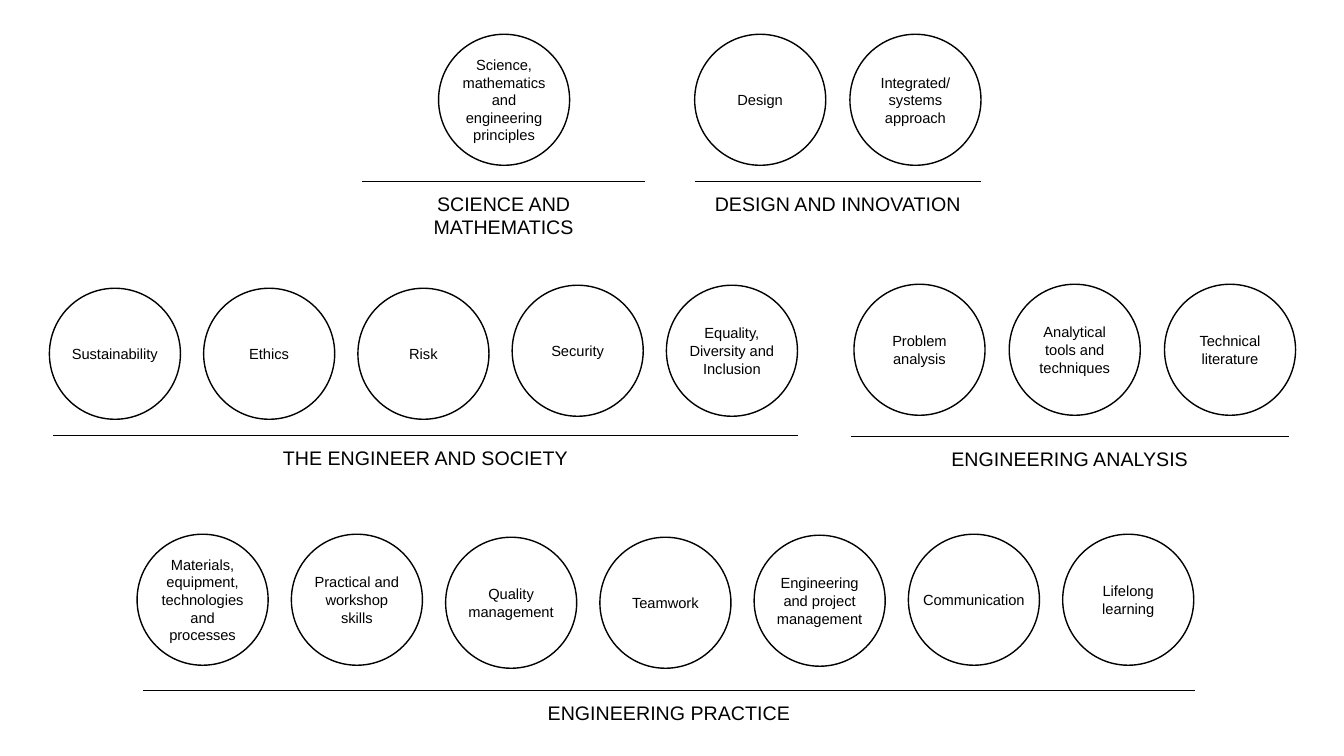
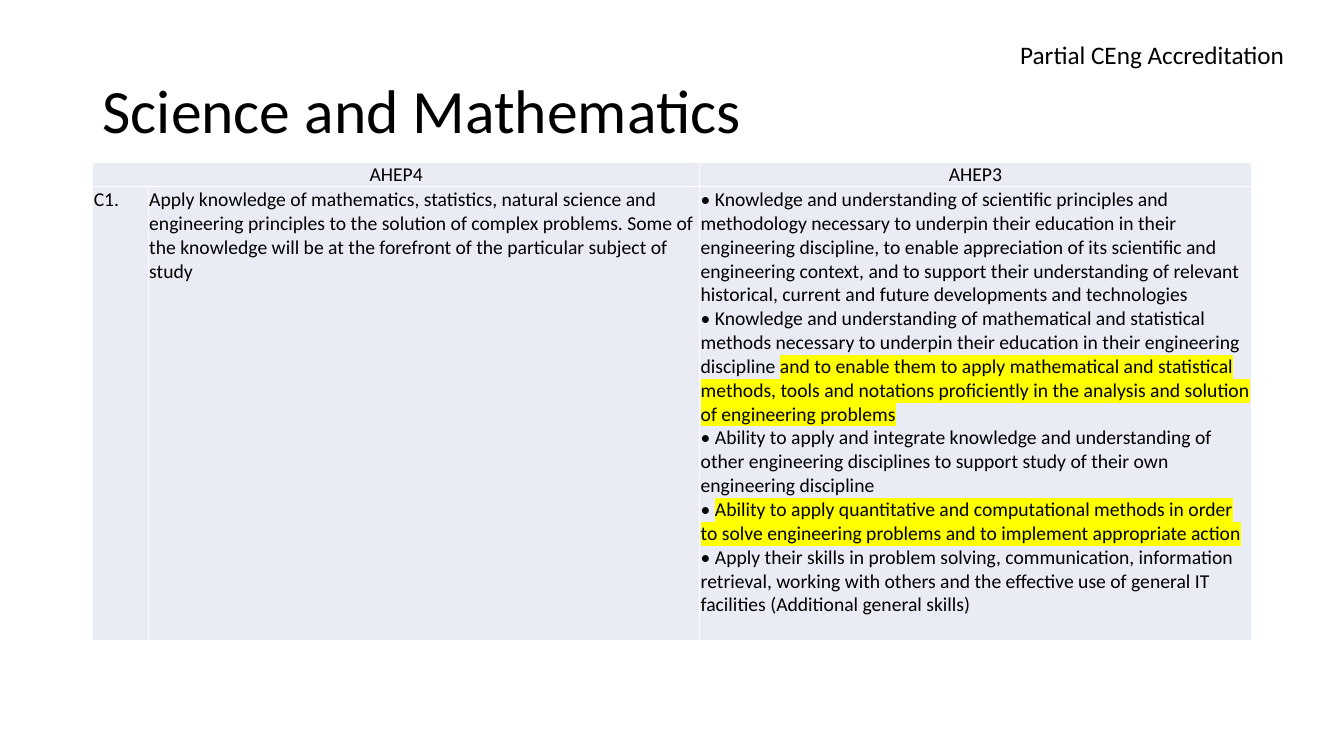
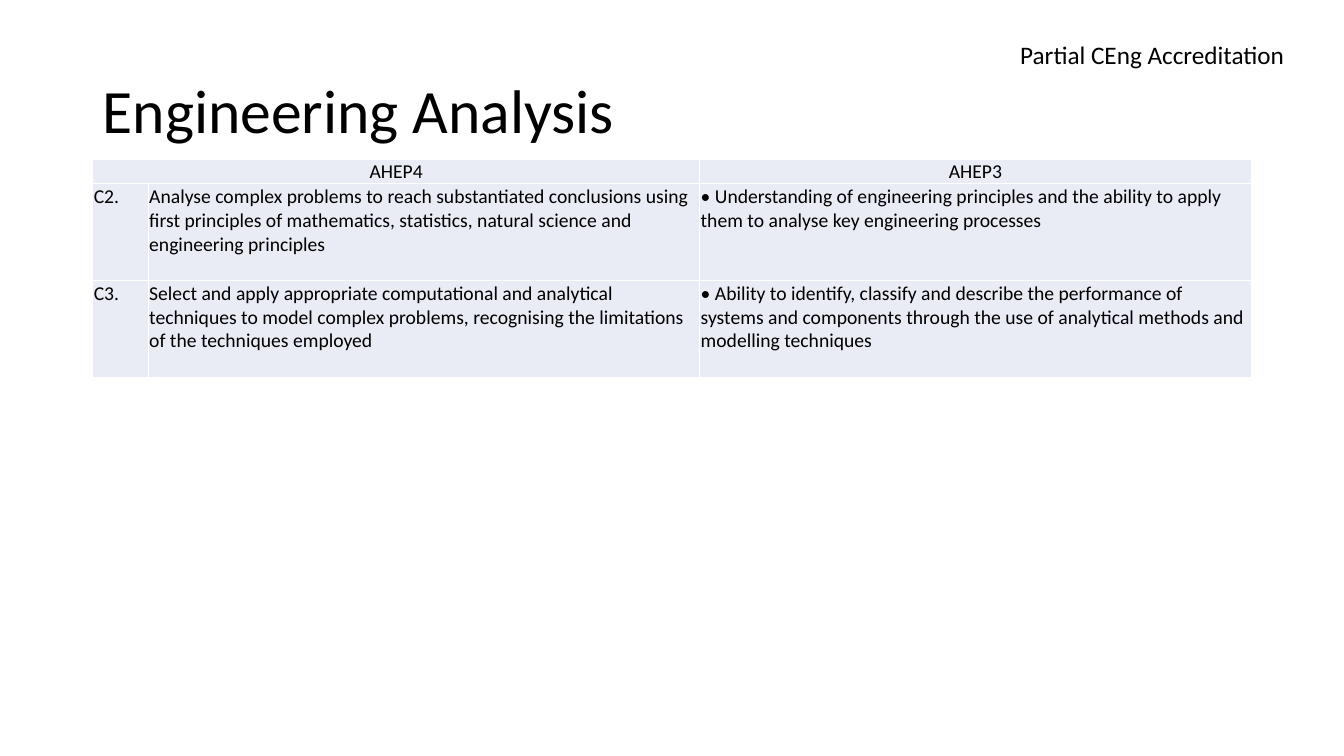
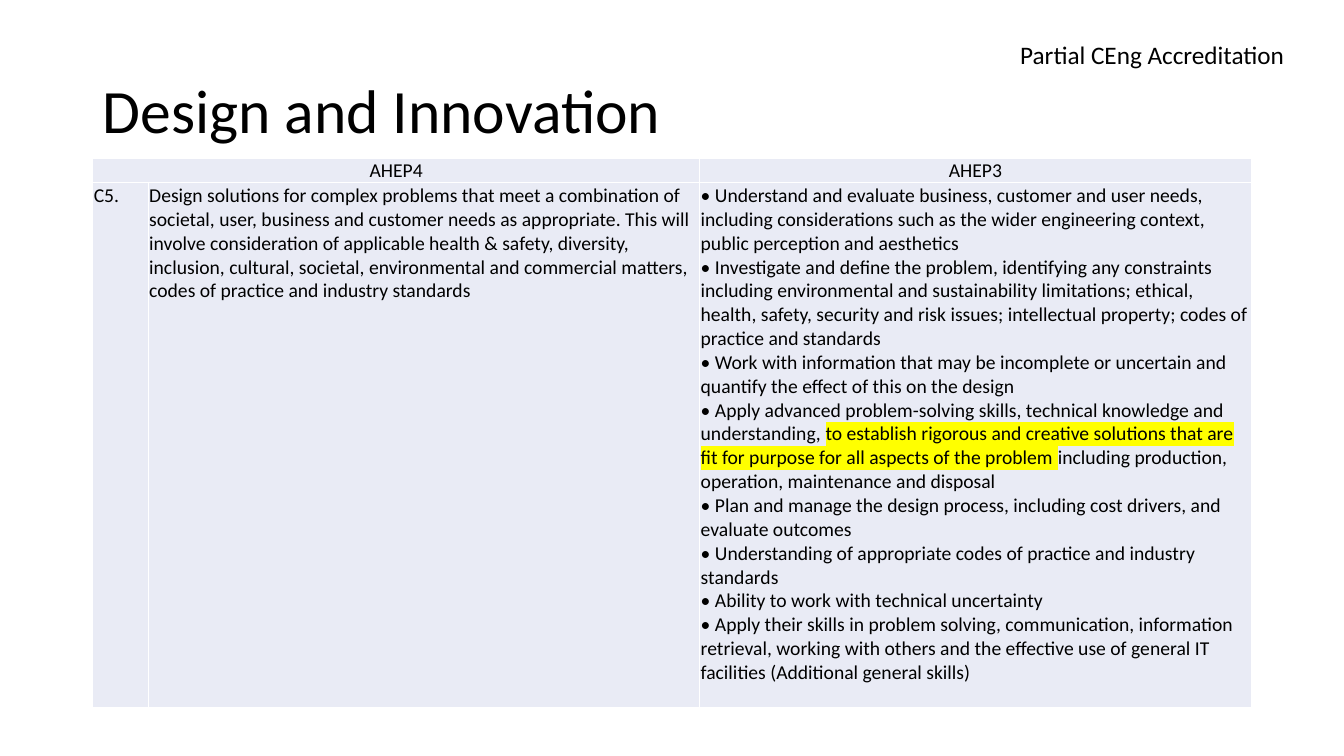
from lxml import etree
from pptx import Presentation
from pptx import util as u
from pptx.dml.color import RGBColor
from pptx.enum import shapes, text
from pptx.oxml import ns

INK = {"text": "000000", "page": "FFFFFF", "cell": "E9EBF5", "mark": "FFFF00"}
ALIGN = {"left": text.PP_ALIGN.LEFT, "center": text.PP_ALIGN.CENTER}
ANCHOR = {"top": text.MSO_ANCHOR.TOP, "middle": text.MSO_ANCHOR.MIDDLE}
BOX = (0.1, 0.05, 0.1, 0.05)
SIZE = 1.3


def rgb(name):
    return RGBColor.from_string(INK[name])


def solid(parent, tag, name):
    """Add a child that holds a plain colour, as highlights and borders do."""
    node = etree.SubElement(parent, ns.qn(tag))
    if tag != "a:highlight":
        node.set("w", str(u.Pt(1)))
        node = etree.SubElement(node, ns.qn("a:solidFill"))
    etree.SubElement(node, ns.qn("a:srgbClr")).set("val", INK[name])


def put(frame, words, size=14, font="Calibri", align="left", space=None):
    """Fill a text frame from a string or a list of paragraphs; |bars| mark highlights."""
    lines = [words] if isinstance(words, str) else words
    for i, line in enumerate(lines):
        para = frame.add_paragraph() if i else frame.paragraphs[0]
        para.alignment = ALIGN[align]
        if space:
            para.line_spacing = space
        for j, part in enumerate(line.split("|")):
            if not part:
                continue
            run = para.add_run()
            run.text = part
            run.font.size = u.Pt(size)
            run.font.color.rgb = rgb("text")
            if j % 2:
                solid(run.font._element, "a:highlight", "mark")
            run.font.name = font


class Deck:
    def __init__(self):
        self.prs = Presentation()
        self.prs.slide_width = u.Inches(13.33)
        self.prs.slide_height = u.Inches(7.5)
        self.page = None

    def new(self):
        self.page = self.prs.slides.add_slide(self.prs.slide_layouts[6])

    def frame(self, shape, wrap=True, anchor="top", pad=BOX):
        frame = shape.text_frame
        frame.word_wrap = wrap
        frame.vertical_anchor = ANCHOR[anchor]
        (frame.margin_left, frame.margin_top,
         frame.margin_right, frame.margin_bottom) = map(u.Inches, pad)
        return frame

    def label(self, at, words, wrap=True, anchor="top", **fmt):
        box = self.page.shapes.add_textbox(*map(u.Inches, at))
        put(self.frame(box, wrap, anchor), words, **fmt)

    def circle(self, left, top, words):
        oval = self.page.shapes.add_shape(
            shapes.MSO_SHAPE.OVAL, *map(u.Inches, (left, top, SIZE, SIZE)))
        oval.shadow.inherit = False
        oval.fill.background()
        oval.line.color.rgb = rgb("text")
        oval.line.width = u.Pt(1)
        # A single word stays on one line
        frame = self.frame(oval, " " in words, "middle", (0, 0, 0, 0))
        put(frame, words, size=10.5, font="Arial", align="center")

    def rule(self, left, right, top):
        line = self.page.shapes.add_connector(
            shapes.MSO_CONNECTOR.STRAIGHT, *map(u.Inches, (left, top, right, top)))
        line.line.color.rgb = rgb("text")
        line.line.width = u.Pt(0.5)
        etree.SubElement(line._element.spPr, ns.qn("a:effectLst"))

    def group(self, name, span, base, start, step, items):
        """A row of circles over a rule and its caption."""
        for i, (top, words) in enumerate(items):
            self.circle(start + i * step, top, words)
        left, right = span
        self.rule(left, right, base)
        self.label((left, base + 0.05, right - left, 0.34), name, wrap=False,
                   font="Arial", align="center")

    def cell(self, cell, words, align="left"):
        (cell.margin_left, cell.margin_top,
         cell.margin_right, cell.margin_bottom) = map(u.Inches, (0.01, 0.01, 0.01, 0))
        props = cell._tc.get_or_add_tcPr()
        for side in "LRTB":
            solid(props, "a:ln" + side, "page")
        cell.fill.solid()
        cell.fill.fore_color.rgb = rgb("cell")
        put(cell.text_frame, words, align=align)

    def table(self, top, highs, rows):
        cols = (0.55, 5.47, 5.47)
        highs = (0.24, *highs)
        rows = [("AHEP4", "", "AHEP3"), *rows]
        grid = self.page.shapes.add_table(
            len(rows), len(cols),
            *map(u.Inches, (0.92, top, sum(cols), sum(highs)))).table
        grid.first_row = grid.horz_banding = False
        for col, wide in zip(grid.columns, cols):
            col.width = u.Inches(wide)
        for row, high in zip(grid.rows, highs):
            row.height = u.Inches(high)
        for r, row in enumerate(rows):
            for c, words in enumerate(row):
                self.cell(grid.cell(r, c), words, "left" if r else "center")
        grid.cell(0, 0).merge(grid.cell(0, 1))

    def theme(self, title, top, highs, rows):
        """A slide that compares the outcomes of one theme."""
        self.new()
        self.label((0.92, 0.4, 11.5, 1.45), title, anchor="middle",
                   size=44, space=0.9)
        self.table(top, highs, rows)
        self.label((10.02, 0.34, 3.11, 0.4), "Partial CEng Accreditation", size=18)


# Name, rule span, rule height, first circle, step, circles (top, text)
GROUPS = [
    ("SCIENCE AND MATHEMATICS", (3.59, 6.4), 1.8, 4.35, 0, [
        (0.34, "Science, mathematics and engineering principles")]),
    ("DESIGN AND INNOVATION", (6.89, 9.73), 1.8, 6.89, 1.54, [
        (0.34, "Design"),
        (0.34, "Integrated/ systems approach")]),
    ("THE ENGINEER AND SOCIETY", (0.53, 7.91), 4.32, 0.49, 1.53, [
        (2.86, "Sustainability"),
        (2.86, "Ethics"),
        (2.86, "Risk"),
        (2.83, "Security"),
        (2.83, "Equality, Diversity and Inclusion")]),
    ("ENGINEERING ANALYSIS", (8.44, 12.78), 4.33, 8.47, 1.54, [
        (2.82, "Problem analysis"),
        (2.82, "Analytical tools and techniques"),
        (2.82, "Technical literature")]),
    ("ENGINEERING PRACTICE", (1.42, 11.85), 6.85, 1.36, 1.53, [
        (5.3, "Materials, equipment, technologies and processes"),
        (5.3, "Practical and workshop skills"),
        (5.33, "Quality management"),
        (5.33, "Teamwork"),
        (5.31, "Engineering and project management"),
        (5.3, "Communication"),
        (5.3, "Lifelong learning")]),
]

SKILLS = (
    "• Apply their skills in problem solving, communication, information retrieval, "
    "working with others and the effective use of general IT facilities "
    "(Additional general skills)")

# Title, table top, row heights, rows
THEMES = [
    ("Science and Mathematics", 1.61, [4.5], [(
        "C1.",
        "Apply knowledge of mathematics, statistics, natural science and engineering "
        "principles to the solution of complex problems. Some of the knowledge will be "
        "at the forefront of the particular subject of study",
        ["• Knowledge and understanding of scientific principles and methodology "
         "necessary to underpin their education in their engineering discipline, to "
         "enable appreciation of its scientific and engineering context, and to support "
         "their understanding of relevant historical, current and future developments "
         "and technologies",
         "• Knowledge and understanding of mathematical and statistical methods "
         "necessary to underpin their education in their engineering discipline "
         "|and to enable them to apply mathematical and statistical methods, tools and "
         "notations proficiently in the analysis and solution of engineering problems|",
         "• Ability to apply and integrate knowledge and understanding of other "
         "engineering disciplines to support study of their own engineering discipline",
         "• |Ability to apply quantitative and computational methods in order to solve "
         "engineering problems and to implement appropriate action|",
         SKILLS])]),
    ("Engineering Analysis", 1.58, [0.96, 0.96], [
        ("C2.",
         "Analyse complex problems to reach substantiated conclusions using first "
         "principles of mathematics, statistics, natural science and engineering "
         "principles",
         "• Understanding of engineering principles and the ability to apply them to "
         "analyse key engineering processes"),
        ("C3.",
         "Select and apply appropriate computational and analytical techniques to "
         "model complex problems, recognising the limitations of the techniques "
         "employed",
         "• Ability to identify, classify and describe the performance of systems and "
         "components through the use of analytical methods and modelling techniques")]),
    ("Design and Innovation", 1.57, [5.21], [(
        "C5.",
        "Design solutions for complex problems that meet a combination of societal, "
        "user, business and customer needs as appropriate. This will involve "
        "consideration of applicable health & safety, diversity, inclusion, cultural, "
        "societal, environmental and commercial matters, codes of practice and "
        "industry standards",
        ["• Understand and evaluate business, customer and user needs, including "
         "considerations such as the wider engineering context, public perception and "
         "aesthetics",
         "• Investigate and define the problem, identifying any constraints including "
         "environmental and sustainability limitations; ethical, health, safety, "
         "security and risk issues; intellectual property; codes of practice and "
         "standards",
         "• Work with information that may be incomplete or uncertain and quantify the "
         "effect of this on the design",
         "• Apply advanced problem-solving skills, technical knowledge and "
         "understanding, |to establish rigorous and creative solutions that are fit for "
         "purpose for all aspects of the problem |including production, operation, "
         "maintenance and disposal",
         "• Plan and manage the design process, including cost drivers, and evaluate "
         "outcomes",
         "• Understanding of appropriate codes of practice and industry standards",
         "• Ability to work with technical uncertainty",
         SKILLS])]),
]


def main():
    deck = Deck()
    # Overview of all themes
    deck.new()
    for group in GROUPS:
        deck.group(*group)
    # One slide for each theme
    for theme in THEMES:
        deck.theme(*theme)
    deck.prs.save("out.pptx")


if __name__ == "__main__":
    main()
